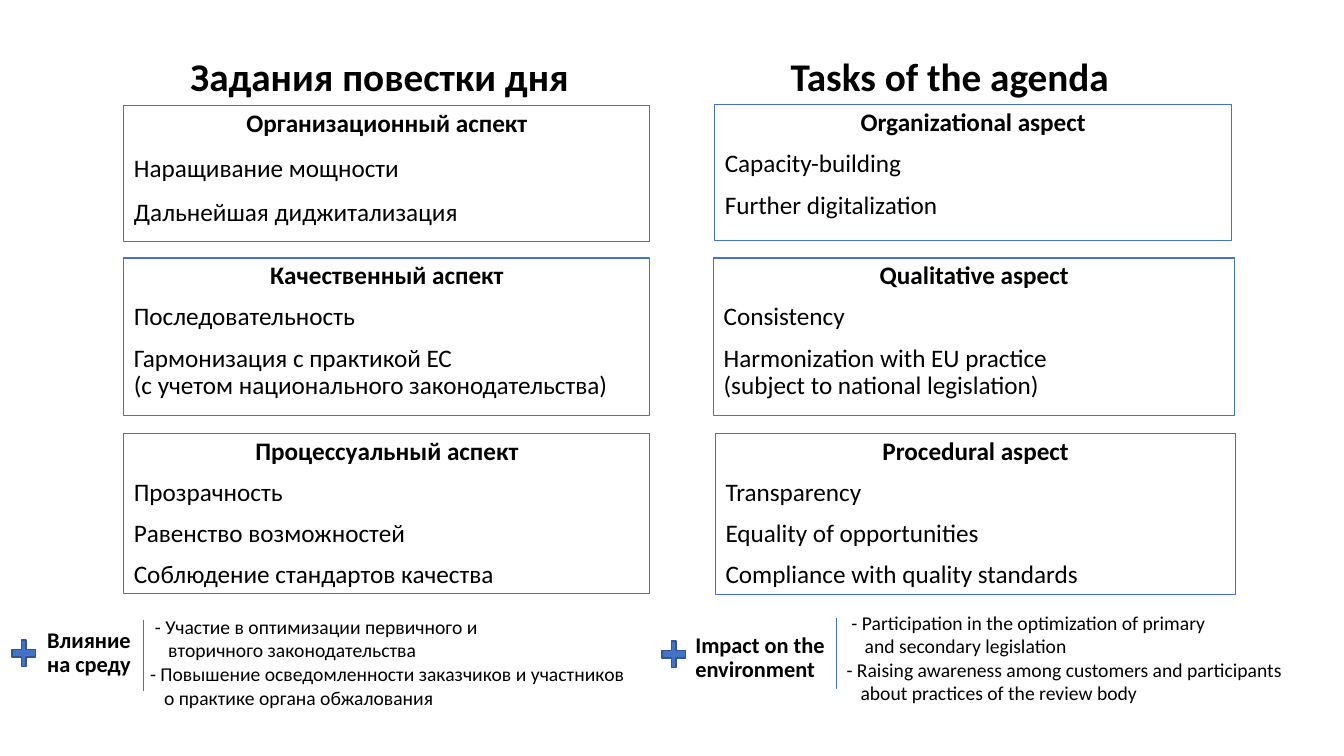
import pptx
import pptx.dml.color
import pptx.enum.shapes
import pptx.enum.text
import pptx.oxml
import pptx.util

Pt = pptx.util.Pt
ALIGN = pptx.enum.text.PP_ALIGN
ANCHOR = pptx.enum.text.MSO_ANCHOR
SHAPES = pptx.enum.shapes.MSO_SHAPE
BLUE, DARK_BLUE, BLACK = "4472C4", "325491", "000000"
BOX_TEXTS = {
    "ru": [
        ["Организационный аспект", "Наращивание мощности", "Дальнейшая диджитализация"],
        ["Качественный аспект", "Последовательность",
         "Гармонизация с практикой ЕС\n(с учетом национального законодательства)"],
        ["Процессуальный аспект", "Прозрачность", "Равенство возможностей",
         "Соблюдение стандартов качества"],
    ],
    "en": [
        ["Organizational aspect", "Capacity-building", "Further digitalization"],
        ["Qualitative aspect", "Consistency",
         "Harmonization with EU practice\n(subject to national legislation)"],
        ["Procedural aspect", "Transparency", "Equality of opportunities",
         "Compliance with quality standards"],
    ],
}
BOX_PLACES = {
    "ru": [(88.5, 75.6, 375.8, 97.2), (88.5, 184.3, 375.8, 112.3), (88.5, 309.6, 375.8, 114.5)],
    "en": [(510.5, 74.9, 369.4, 97.2), (509.8, 184.3, 372.2, 112.3), (511.2, 309.6, 371.5, 115.2)],
}
IMPACT_TEXTS = {
    "ru": ("Влияние\nна среду", [
        "- Участие в оптимизации первичного и\nвторичного законодательства",
        "- Повышение осведомленности заказчиков и участников\nо практике органа обжалования"]),
    "en": ("Impact on the environment", [
        "- Participation in the optimization of primary\nand secondary legislation",
        "- Raising awareness among customers and participants\nabout practices of the review body"]),
}
IMPACT_PLACES = {
    "ru": {"plus": (8.6, 457.2, 16.6, 18.7), "label": (26.6, 445.7, 105.8, 52.6),
           "list": (100.1, 435.6, 371.5, 82), "divider": (102.2, 442.8)},
    "en": {"plus": (473, 457.9, 16.6, 18.7), "label": (489.6, 449.3, 109.4, 35.3),
           "list": (597.6, 432.7, 371.5, 89.3), "divider": (597.6, 441.4)},
}


def color(value):
    """Return the colour of a hex string."""
    return pptx.dml.color.RGBColor.from_string(value)


def place(shape, box):
    """Move and size a shape in points."""
    shape.left, shape.top, shape.width, shape.height = map(Pt, box)


def write(paragraph, text, size, bold=False, align=ALIGN.LEFT, spacing=0.9, before=10):
    """Set the text and the format of a paragraph."""
    paragraph.text = text
    paragraph.alignment = align
    paragraph.line_spacing = spacing
    paragraph.space_before = Pt(before)
    for run in paragraph.runs:
        run.font.name = "Calibri"
        run.font.size = Pt(size)
        run.font.bold = bold
        run.font.color.rgb = color(BLACK)


def set_indent(paragraph, margin, first_line):
    """Set the left margin and first-line indent, without a bullet."""
    properties = paragraph._p.get_or_add_pPr()
    properties.set("marL", str(Pt(margin)))
    properties.set("indent", str(Pt(first_line)))
    properties.append(pptx.oxml.parse_xml(
        '<a:buNone xmlns:a="http://schemas.openxmlformats.org/drawingml/2006/main"/>'))


def prepare_frame(shape, anchor=ANCHOR.TOP):
    """Return the wrapped text frame of a shape."""
    frame = shape.text_frame
    frame.word_wrap = True
    frame.auto_size = pptx.enum.text.MSO_AUTO_SIZE.NONE
    frame.vertical_anchor = anchor
    return frame


def add_text_box(slide, box):
    """Add an empty text box."""
    return slide.shapes.add_textbox(*map(Pt, box))


def fill_title(shape, text):
    """Write a column heading."""
    frame = prepare_frame(shape, ANCHOR.MIDDLE)
    write(frame.paragraphs[0], text, 28, True, ALIGN.CENTER, before=0)


def fill_aspect(shape, texts, item_spacing=0.9):
    """Outline a box and write its heading and items."""
    shape.fill.background()
    shape.line.color.rgb = color(BLUE)
    shape.line.width = Pt(0.75)
    frame = prepare_frame(shape)
    heading = frame.paragraphs[0]
    write(heading, texts[0], 18, True, ALIGN.CENTER)
    set_indent(heading, 0, 0)
    for text in texts[1:]:
        item = frame.add_paragraph()
        write(item, text, 18, spacing=item_spacing)
        set_indent(item, 0, 0)


def add_plus(slide, box):
    """Add a plus sign."""
    plus = slide.shapes.add_shape(SHAPES.CROSS, *map(Pt, box))
    plus.adjustments[0] = 0.4
    plus.shadow.inherit = False
    plus.fill.solid()
    plus.fill.fore_color.rgb = color(BLUE)
    plus.line.color.rgb = color(DARK_BLUE)
    plus.line.width = Pt(1)


def add_divider(slide, left, top):
    """Add a thin vertical line."""
    divider = slide.shapes.add_connector(
        pptx.enum.shapes.MSO_CONNECTOR.STRAIGHT, Pt(left), Pt(top), Pt(left), Pt(top + 51.1))
    divider.line.color.rgb = color(BLUE)
    divider.line.width = Pt(0.5)
    divider._element.spPr.append(pptx.oxml.parse_xml(
        '<a:effectLst xmlns:a="http://schemas.openxmlformats.org/drawingml/2006/main"/>'))


def add_impact(slide, texts, places):
    """Add the plus sign, label, line and list of one language."""
    label, items = texts
    add_plus(slide, places["plus"])
    label_frame = prepare_frame(add_text_box(slide, places["label"]))
    write(label_frame.paragraphs[0], label, 16, True)
    add_divider(slide, *places["divider"])
    list_frame = prepare_frame(add_text_box(slide, places["list"]))
    paragraphs = [list_frame.paragraphs[0], list_frame.add_paragraph()]
    indents = [(13, -9.5), (10, -10)]
    for paragraph, item, indent in zip(paragraphs, items, indents):
        write(paragraph, item, 14, spacing=1.0, before=0)
        set_indent(paragraph, *indent)


def main():
    """Build and save the slide."""
    presentation = pptx.Presentation()
    presentation.slide_width, presentation.slide_height = Pt(960), Pt(540)
    slide = presentation.slides.add_slide(presentation.slide_layouts[3])
    place(slide.shapes.title, (72.7, 31.7, 396.7, 49))
    fill_title(slide.shapes.title, "Задания повестки дня")
    fill_title(add_text_box(slide, (483.1, 31.7, 396.7, 49)), "Tasks of the agenda ")
    for index, language in enumerate(("ru", "en"), start=1):
        boxes = BOX_PLACES[language]
        shapes = [slide.placeholders[index]]
        place(shapes[0], boxes[0])
        for box in boxes[1:]:
            shape = slide.shapes.add_shape(SHAPES.RECTANGLE, *map(Pt, box))
            shape.shadow.inherit = False
            shapes.append(shape)
        for row, (shape, texts) in enumerate(zip(shapes, BOX_TEXTS[language])):
            fill_aspect(shape, texts, 1.0 if (language, row) == ("ru", 0) else 0.9)
        add_impact(slide, IMPACT_TEXTS[language], IMPACT_PLACES[language])
    presentation.save("out.pptx")


if __name__ == "__main__":
    main()
